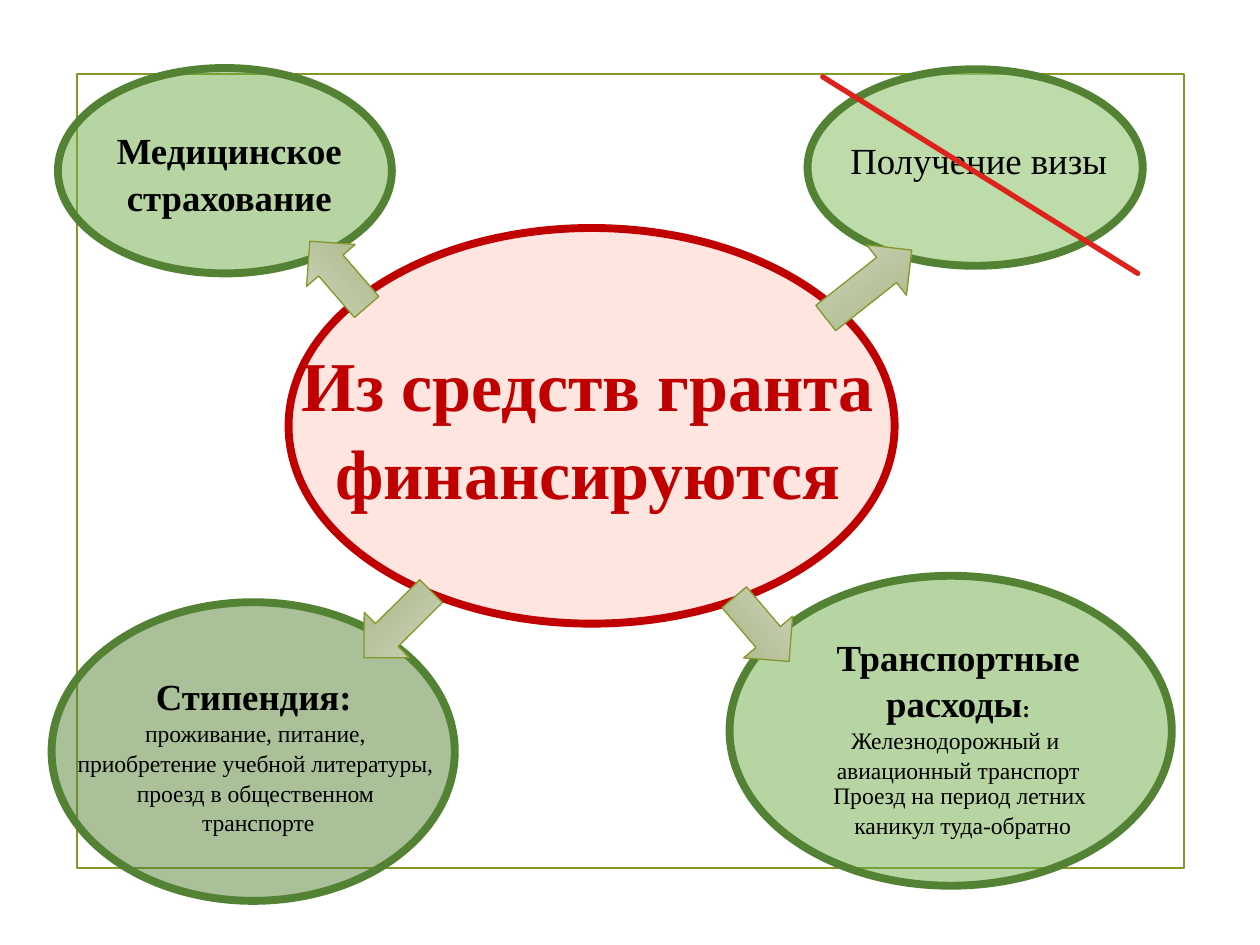
from dataclasses import dataclass

from lxml import etree
from pptx import Presentation
from pptx import util as u
from pptx.dml.color import RGBColor
from pptx.enum import shapes, text
from pptx.oxml.ns import qn


@dataclass(frozen=True)
class Theme:
    font: str = "Times New Roman"
    ink: str = "000000"
    olive: str = "83992A"
    green: str = "548235"
    leaf: str = "70AD47"
    light_leaf: str = "95C674"
    coral: str = "FF6A47"
    crimson: str = "C00000"
    strike: str = "DC241C"
    arrow: tuple = ("D3D9C4", "A3B17D")
    title: float = 40
    head: float = 21
    body: float = 13.5
    thick: float = 4.5
    leading: float = 1.05


class Deck:
    def __init__(self, theme):
        self.t = theme
        self.prs = Presentation()
        self.prs.slide_width, self.prs.slide_height = u.Inches(10), u.Inches(7.5)
        self.s = self.prs.slides.add_slide(self.prs.slide_layouts[6])

    def outline(self, sp, color, width):
        sp.line.color.rgb = RGBColor.from_string(color)
        sp.line.width = u.Pt(width)

    def shape(self, kind, at, color, width):
        sp = self.s.shapes.add_shape(kind, *map(u.Inches, at))
        sp.shadow.inherit = False
        self.outline(sp, color, width)
        return sp

    def frame(self, at):
        sp = self.shape(shapes.MSO_SHAPE.RECTANGLE, at, self.t.olive, 1.25)
        sp.fill.background()

    def oval(self, at, fill, opacity, line):
        sp = self.shape(shapes.MSO_SHAPE.OVAL, at, line, self.t.thick)
        sp.fill.solid()
        sp.fill.fore_color.rgb = RGBColor.from_string(fill)
        clr = sp.fill._xPr.find(qn("a:solidFill"))[0]
        etree.SubElement(clr, qn("a:alpha")).set("val", str(opacity * 1000))

    def arrow(self, at, rotation):
        sp = self.shape(shapes.MSO_SHAPE.RIGHT_ARROW, at, self.t.olive, 0.75)
        sp.rotation = rotation
        sp.fill.gradient()
        sp.fill.gradient_angle = 270
        for stop, color in zip(sp.fill.gradient_stops, self.t.arrow):
            stop.color.rgb = RGBColor.from_string(color)

    def strike(self, start, end):
        sp = self.s.shapes.add_connector(
            shapes.MSO_CONNECTOR.STRAIGHT, *map(u.Inches, start + end))
        self.outline(sp, self.t.strike, 3)
        sp.line._get_or_add_ln().set("cap", "rnd")
        etree.SubElement(sp._element.spPr, qn("a:effectLst"))

    def text(self, at, paragraphs, color=None, wrap=False,
             align=text.PP_ALIGN.CENTER):
        sp = self.s.shapes.add_textbox(*map(u.Inches, at))
        tf = sp.text_frame
        tf.word_wrap = wrap
        if wrap:
            tf.vertical_anchor = text.MSO_ANCHOR.MIDDLE
        else:
            tf.auto_size = text.MSO_AUTO_SIZE.SHAPE_TO_FIT_TEXT
        for i, runs in enumerate(paragraphs):
            p = tf.add_paragraph() if i else tf.paragraphs[0]
            p.alignment = align
            p.line_spacing = self.t.leading
            for words, size, bold in runs:
                r = p.add_run()
                r.text = words
                r.font.name = self.t.font
                r.font.size = u.Pt(size)
                r.font.bold = bold
                r.font.color.rgb = RGBColor.from_string(color or self.t.ink)


def main():
    t = Theme()
    d = Deck(t)

    def head(words):
        return [(words, t.head, True)]

    def body(*lines):
        return [[(words, t.body, False)] for words in lines]

    d.frame((0.61, 0.59, 8.79, 6.3))
    for at, fill, opacity, line in [
        ((6.41, 0.55, 2.66, 1.56), t.light_leaf, 61, t.green),
        ((5.79, 4.57, 3.51, 2.46), t.leaf, 50, t.green),
        ((0.41, 4.78, 3.2, 2.37), t.green, 50, t.green),
        ((0.46, 0.54, 2.65, 1.63), t.leaf, 50, t.green),
        ((2.29, 1.81, 4.81, 3.14), t.coral, 17, t.crimson),
    ]:
        d.oval(at, fill, opacity, line)

    d.text((2.29, 2.06, 4.75, 2.64),
           [[("Из средств гранта финансируются", t.title, True)]],
           color=t.crimson, wrap=True)
    d.text((0.75, 0.95, 2.14, 0.81), [head("Медицинское"), head("страхование")])
    d.text((6.45, 4.97, 2.31, 1.26),
           [head("Транспортные"), head("расходы") + [(":", t.body, True)]]
           + body("Железнодорожный и ", "авиационный транспорт"))
    d.text((0.34, 5.28, 3.42, 1.36),
           [head("Стипендия: ")]
           + body("проживание, питание, ", "приобретение учебной литературы, ",
                  "проезд в общественном ", "транспорте"))
    d.text((6.39, 6.14, 2.5, 0.56),
           body("Проезд на период летних ", "каникул туда-обратно"))
    d.text((6.65, 1.03, 2.42, 0.45), [[("Получение визы", t.head, False)]],
           align=text.PP_ALIGN.LEFT)

    for at, rotation in [
        ((6.46, 2, 0.87, 0.51), 321.7),
        ((5.71, 4.74, 0.67, 0.51), 49.5),
        ((2.34, 1.92, 0.69, 0.51), 229.2),
        ((2.78, 4.7, 0.75, 0.51), 135.2),
    ]:
        d.arrow(at, rotation)
    d.strike((6.53, 0.61), (9.03, 2.17))
    d.prs.save("out.pptx")


if __name__ == "__main__":
    main()
